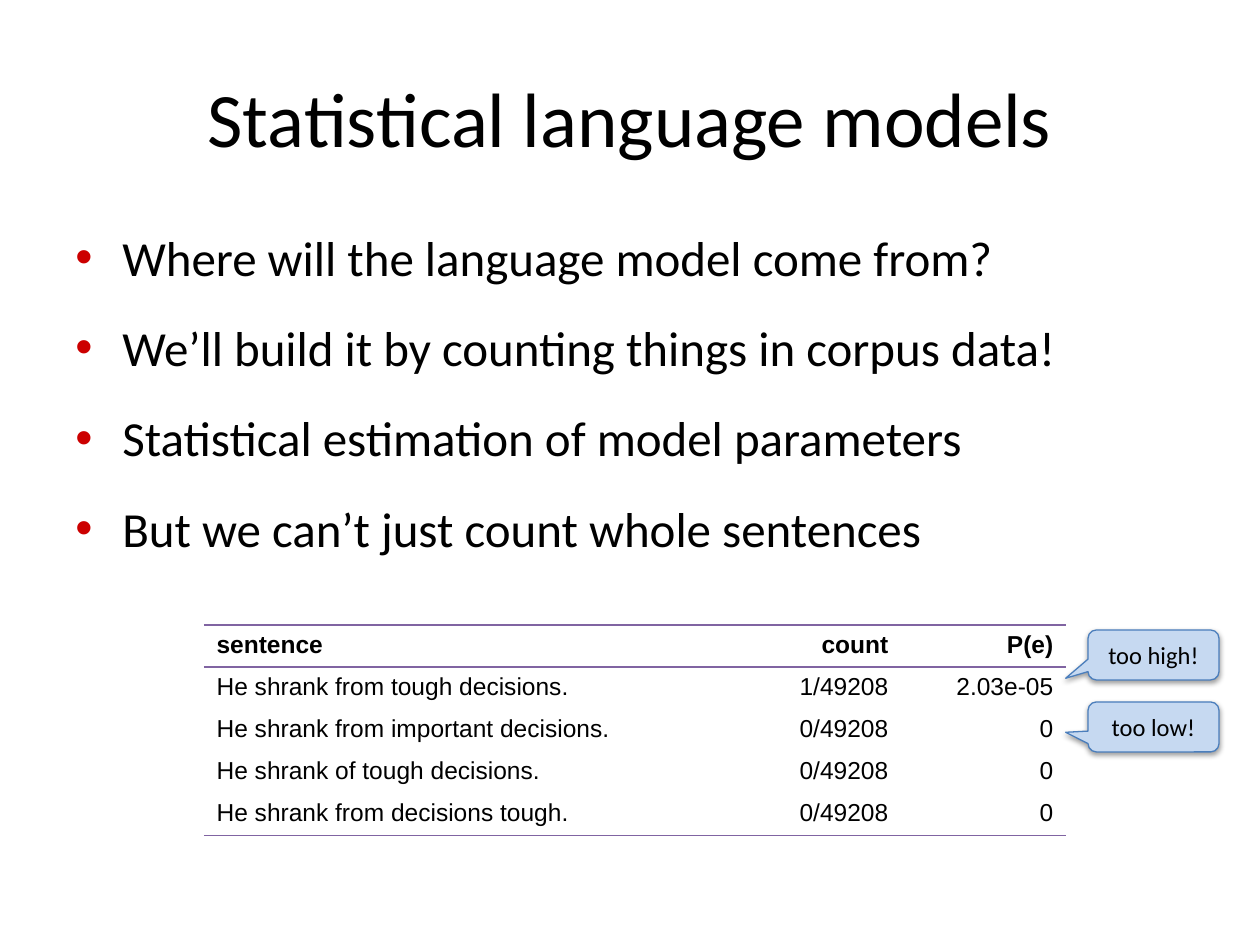
from dataclasses import dataclass
from lxml.etree import SubElement
from pptx import Presentation
from pptx.dml.color import RGBColor
from pptx.enum.shapes import MSO_SHAPE as Shape
from pptx.enum.text import MSO_ANCHOR as Anchor, PP_ALIGN as Align
from pptx.oxml import parse_xml
from pptx.oxml.ns import nsdecls, qn
from pptx.util import Emu, Pt

HEX = {"ink": "000000", "bullet": "CC0000", "rule": "8064A2",
       "fill": "C6D9F1", "edge": "4B7EBC"}
PLAIN = "{2D5ABB26-0587-4C30-8999-92F81FD0307C}"  # table style without lines


@dataclass
class Callout:
    text: str
    top: int
    tip: float


POINTS = [
    "Where will the language model come from?",
    "We’ll build it by counting things in corpus data!",
    "Statistical estimation of model parameters",
    "But we can’t just count whole sentences",
]
ROWS = [
    ("sentence", "count", "P(e)"),
    ("He shrank from tough decisions.", "1/49208", "2.03e-05"),
    ("He shrank from important decisions.", "0/49208", "0"),
    ("He shrank of tough decisions.", "0/49208", "0"),
    ("He shrank from decisions tough.", "0/49208", "0"),
]
WIDTHS = [532, 165, 165]
CALLOUTS = [Callout("too high!", 630, 0.467), Callout("too low!", 702, 0.108)]


def px(n: int) -> Emu:
    return Emu(round(n * 914400 / 126))


def box(*sides: int) -> list[Emu]:
    return [px(n) for n in sides]


def color(name: str) -> RGBColor:
    return RGBColor.from_string(HEX[name])


def style(para, size: int, font: str = "Calibri", bold: bool = False,
          align=Align.LEFT) -> None:
    para.alignment = align
    for run in para.runs:
        run.font.size, run.font.name, run.font.bold = Pt(size), font, bold
        run.font.color.rgb = color("ink")


def add_bullet(para) -> None:
    props = para._p.get_or_add_pPr()
    props.set("marL", str(px(47)))
    props.set("indent", str(-px(47)))
    tint = SubElement(props, qn("a:buClr"))
    SubElement(tint, qn("a:srgbClr"), val=HEX["bullet"])
    SubElement(props, qn("a:buFont"), typeface="Arial")
    SubElement(props, qn("a:buChar"), char="•")


def add_rule(cell, side: str) -> None:
    line = SubElement(cell._tc.get_or_add_tcPr(), qn(f"a:ln{side}"), w=str(Pt(1)))
    fill = SubElement(line, qn("a:solidFill"))
    SubElement(fill, qn("a:srgbClr"), val=HEX["rule"])


def add_counts(slide) -> None:
    frame = slide.shapes.add_table(len(ROWS), len(WIDTHS),
                                   *box(204, 625, sum(WIDTHS), 40 * len(ROWS)))
    table = frame.table
    table.horz_banding = table.first_row = False
    table._tbl.tblPr.find(qn("a:tableStyleId")).text = PLAIN
    for col, width in zip(table.columns, WIDTHS):
        col.width = px(width)
    for r, row in enumerate(ROWS):
        table.rows[r].height = px(40)
        for c, text in enumerate(row):
            cell = table.cell(r, c)
            cell.text_frame.text = text
            style(cell.text_frame.paragraphs[0], 14, "Arial", r == 0,
                  Align.RIGHT if c else Align.LEFT)
            if r == 0:
                add_rule(cell, "T")
            if r in (0, len(ROWS) - 1):
                add_rule(cell, "B")
            cell.fill.background()


def add_callout(slide, item: Callout) -> None:
    shape = slide.shapes.add_shape(Shape.ROUNDED_RECTANGULAR_CALLOUT,
                                   *box(1088, item.top, 131, 50))
    for i, value in enumerate((-0.671, item.tip, 0.167)):
        shape.adjustments[i] = value
    shape.fill.solid()
    shape.fill.fore_color.rgb = color("fill")
    shape.line.color.rgb = color("edge")
    shape.line.width = Pt(0.75)
    shape._element.spPr.append(parse_xml(
        f'<a:effectLst {nsdecls("a")}><a:outerShdw blurRad="40000" dist="20000" '
        'dir="5400000" rotWithShape="0"><a:srgbClr val="000000">'
        '<a:alpha val="38000"/></a:srgbClr></a:outerShdw></a:effectLst>'))
    frame = shape.text_frame
    frame.text = item.text
    frame.vertical_anchor = Anchor.MIDDLE
    style(frame.paragraphs[0], 14, align=Align.CENTER)


def main() -> None:
    deck = Presentation()
    deck.slide_width, deck.slide_height = box(1260, 945)
    slide = deck.slides.add_slide(deck.slide_layouts[5])

    # Title
    title = slide.shapes.title
    title.left, title.top, title.width, title.height = box(63, 38, 1134, 158)
    title.text_frame.text = "Statistical language models"
    title.text_frame.vertical_anchor = Anchor.MIDDLE
    style(title.text_frame.paragraphs[0], 44, align=Align.CENTER)

    # Bullet points
    body = slide.shapes.add_textbox(*box(63, 221, 1134, 309)).text_frame
    body.word_wrap = True
    body.text = "\n".join(POINTS)
    for para in body.paragraphs:
        para.space_before = Pt(18)
        style(para, 28)
        add_bullet(para)

    # Sentence counts and remarks
    add_counts(slide)
    for item in CALLOUTS:
        add_callout(slide, item)

    deck.save("out.pptx")


if __name__ == "__main__":
    main()
